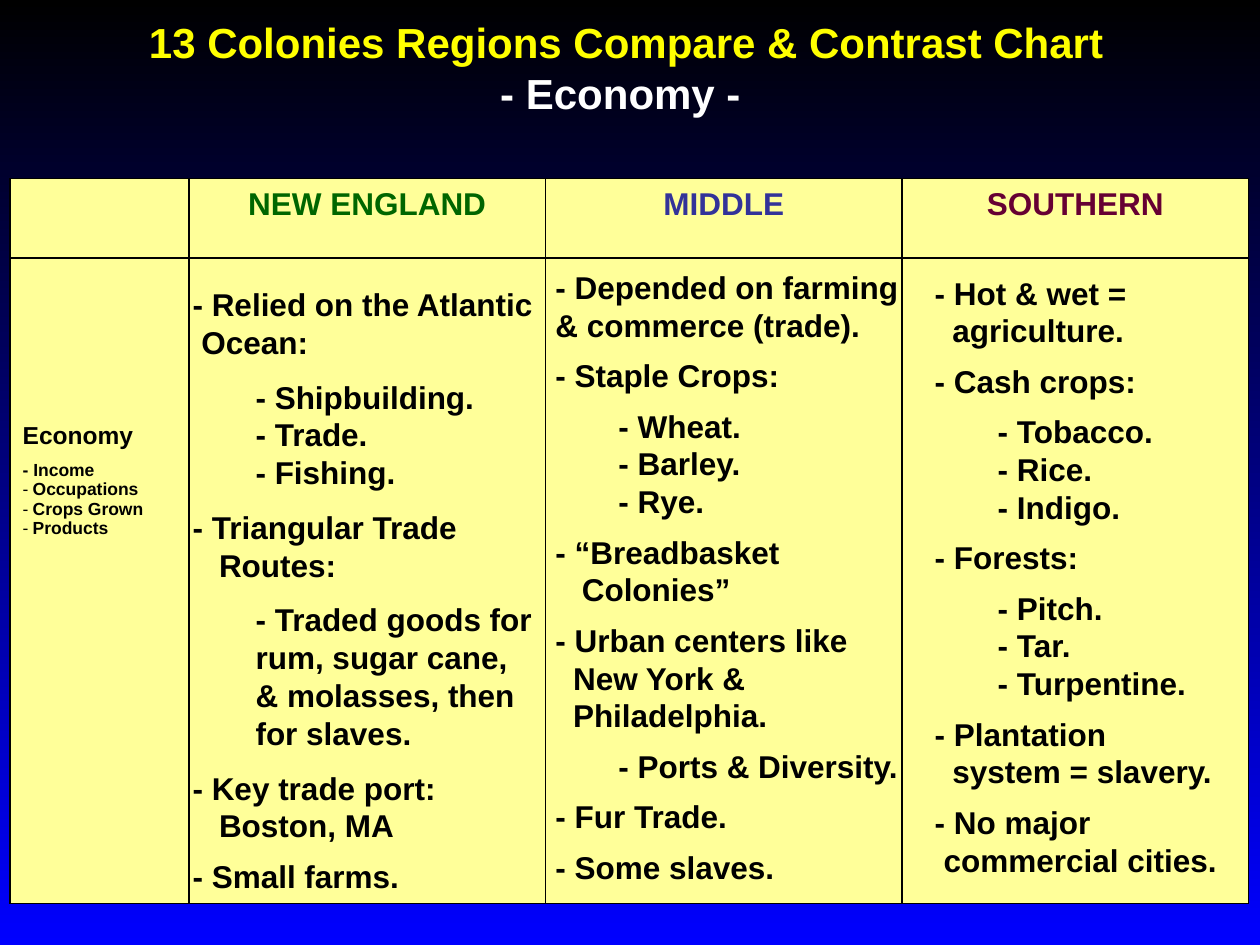
from dataclasses import dataclass
from typing import Optional

from lxml.etree import SubElement
from pptx import Presentation
from pptx.dml.color import RGBColor
from pptx.enum.text import PP_ALIGN
from pptx.oxml.ns import qn
from pptx.util import Inches, Pt

BLACK = RGBColor(0x00, 0x00, 0x00)
WHITE = RGBColor(0xFF, 0xFF, 0xFF)
BLUE = RGBColor(0x00, 0x00, 0xFF)
YELLOW = RGBColor(0xFF, 0xFF, 0x00)
CREAM = RGBColor(0xFF, 0xFF, 0x99)
GREEN = RGBColor(0x00, 0x66, 0x00)
INDIGO = RGBColor(0x33, 0x33, 0x99)
MAROON = RGBColor(0x66, 0x00, 0x33)

SLIDE_WIDTH, SLIDE_HEIGHT = Inches(10), Inches(7.5)
COLUMN_SHARES = (0.142, 0.283, 0.283, 0.275)
ROW_SHARES = (0.084, 0.683)
TABLE_LEFT, TABLE_TOP = 0.008, 0.189
SUB_INDENT = 0.5
SPACE_WIDTH = 0.07
SMALL_GAP, WIDE_GAP = 7.2, 9.7


@dataclass(frozen=True)
class Line:
    text: str
    indent: float = 0
    gap: float = 0
    size: float = 18
    pitch: float = 21.6
    color: RGBColor = BLACK
    align: PP_ALIGN = PP_ALIGN.LEFT
    bullet: Optional[str] = None


@dataclass(frozen=True)
class Region:
    name: str
    color: RGBColor
    left: float
    top: float
    width: float
    height: float
    gap: float
    groups: tuple[tuple[Line, ...], ...]
    last_gap: float = SMALL_GAP


def point(*rows: str, hang: int = 0) -> tuple[Line, ...]:
    """Return a main point whose later rows hang by a number of spaces."""
    return tuple(Line(row, hang * SPACE_WIDTH if i else 0) for i, row in enumerate(rows))


def details(*rows: str) -> tuple[Line, ...]:
    """Return rows set one level below a main point."""
    return tuple(Line(row, SUB_INDENT) for row in rows)


REGIONS = (
    Region("NEW ENGLAND", GREEN, 0.143, 0.295, 0.298, 0.659, WIDE_GAP, (
        point("- Relied on the Atlantic", "Ocean:", hang=1),
        details("- Shipbuilding.", "- Trade.", "- Fishing."),
        point("- Triangular Trade", "Routes:", hang=3),
        details("- Traded goods for", "rum, sugar cane,", "& molasses, then", "for slaves."),
        point("- Key trade port:", "Boston, MA", hang=3),
        point("- Small farms."),
    )),
    Region("MIDDLE", INDIGO, 0.431, 0.277, 0.294, 0.668, SMALL_GAP, (
        point("- Depended on farming", "& commerce (trade)."),
        point("- Staple Crops:"),
        details("- Wheat.", "- Barley.", "- Rye."),
        point("- “Breadbasket", "Colonies”", hang=3),
        point("- Urban centers like", "New York &", "Philadelphia.", hang=2),
        details("- Ports & Diversity."),
        point("- Fur Trade."),
        point("- Some slaves."),
    )),
    Region("SOUTHERN", MAROON, 0.732, 0.283, 0.268, 0.695, SMALL_GAP, (
        point("- Hot & wet =", "agriculture.", hang=2),
        point("- Cash crops:"),
        details("- Tobacco.", "- Rice.", "- Indigo."),
        point("- Forests:"),
        details("- Pitch.", "- Tar.", "- Turpentine."),
        point("- Plantation", "system = slavery.", hang=2),
        point("- No major", "commercial cities.", hang=1),
    )),
)

TITLE = (
    Line("13 Colonies Regions Compare & Contrast Chart", size=24, pitch=29,
         color=YELLOW, align=PP_ALIGN.CENTER),
    Line("- Economy - ", size=24, pitch=29, color=WHITE, align=PP_ALIGN.CENTER),
)
TOPICS = (
    Line("Economy", size=14, pitch=16.5),
    Line("- Income", size=10, pitch=11.1, gap=6.5),
    *(Line(topic, indent=0.08, size=10, pitch=11.1, bullet="-")
      for topic in ("Occupations", "Crops Grown", "Products")),
)


def write_lines(frame, lines) -> None:
    """Fill a text frame with formatted lines."""
    frame.text = "\n".join(line.text for line in lines)
    for paragraph, line in zip(frame.paragraphs, lines):
        paragraph.alignment = line.align
        paragraph.line_spacing = Pt(line.pitch)
        paragraph.space_before = Pt(line.gap)
        paragraph.space_after = Pt(0)
        font = paragraph.runs[0].font
        font.name, font.size, font.bold = "Arial", Pt(line.size), True
        font.color.rgb = line.color
        properties = paragraph._p.get_or_add_pPr()
        properties.set("marL", str(Inches(line.indent)))
        properties.set("indent", str(Inches(-line.indent if line.bullet else 0)))
        if line.bullet:
            SubElement(properties, qn("a:buFont")).set("typeface", "Arial")
            SubElement(properties, qn("a:buChar")).set("char", line.bullet)


def add_text(slide, left: float, top: float, width: float, height: float, lines) -> None:
    """Add a wrapped text box placed by shares of the slide."""
    box = slide.shapes.add_textbox(
        int(left * SLIDE_WIDTH), int(top * SLIDE_HEIGHT),
        int(width * SLIDE_WIDTH), int(height * SLIDE_HEIGHT))
    box.text_frame.word_wrap = True
    write_lines(box.text_frame, lines)


def region_lines(region: Region) -> list[Line]:
    """Flatten a region's groups, with a gap ahead of each later group."""
    lines: list[Line] = []
    for number, group in enumerate(region.groups):
        is_last = number == len(region.groups) - 1
        gap = 0 if not number else region.last_gap if is_last else region.gap
        lines.append(Line(group[0].text, group[0].indent, gap))
        lines.extend(group[1:])
    return lines


def style_cell(cell) -> None:
    """Draw black borders around a cream cell."""
    properties = cell._tc.get_or_add_tcPr()
    for side in ("a:lnL", "a:lnR", "a:lnT", "a:lnB"):
        border = SubElement(properties, qn(side), w=str(Pt(1)))
        color = SubElement(SubElement(border, qn("a:solidFill")), qn("a:srgbClr"))
        color.set("val", str(BLACK))
    cell.fill.solid()
    cell.fill.fore_color.rgb = CREAM


def add_comparison(slide) -> None:
    """Add the table with its region headings and topic list."""
    table = slide.shapes.add_table(
        len(ROW_SHARES), len(COLUMN_SHARES),
        int(TABLE_LEFT * SLIDE_WIDTH), int(TABLE_TOP * SLIDE_HEIGHT),
        int(sum(COLUMN_SHARES) * SLIDE_WIDTH), int(sum(ROW_SHARES) * SLIDE_HEIGHT)).table
    table.first_row = table.horz_banding = False
    for column, share in zip(table.columns, COLUMN_SHARES):
        column.width = int(share * SLIDE_WIDTH)
    for row, share in zip(table.rows, ROW_SHARES):
        row.height = int(share * SLIDE_HEIGHT)
    for cell in table.iter_cells():
        style_cell(cell)
    for number, region in enumerate(REGIONS, start=1):
        heading = Line(region.name, color=region.color, align=PP_ALIGN.CENTER)
        write_lines(table.cell(0, number).text_frame, [heading])
    topic_cell = table.cell(1, 0)
    topic_cell.margin_top = Inches(1.29)
    write_lines(topic_cell.text_frame, TOPICS)


def main() -> None:
    """Build and save the colonial economy slide."""
    deck = Presentation()
    deck.slide_width, deck.slide_height = SLIDE_WIDTH, SLIDE_HEIGHT
    slide = deck.slides.add_slide(deck.slide_layouts[6])
    backdrop = slide.background.fill
    backdrop.gradient()
    backdrop.gradient_angle = 270
    for stop, color, position in zip(backdrop.gradient_stops, (BLACK, BLUE), (0, 1)):
        stop.color.rgb, stop.position = color, position
    add_text(slide, 0.093, 0.011, 0.808, 0.12, TITLE)
    add_comparison(slide)
    for region in REGIONS:
        add_text(slide, region.left, region.top, region.width, region.height,
                 region_lines(region))
    deck.save("out.pptx")


if __name__ == "__main__":
    main()
